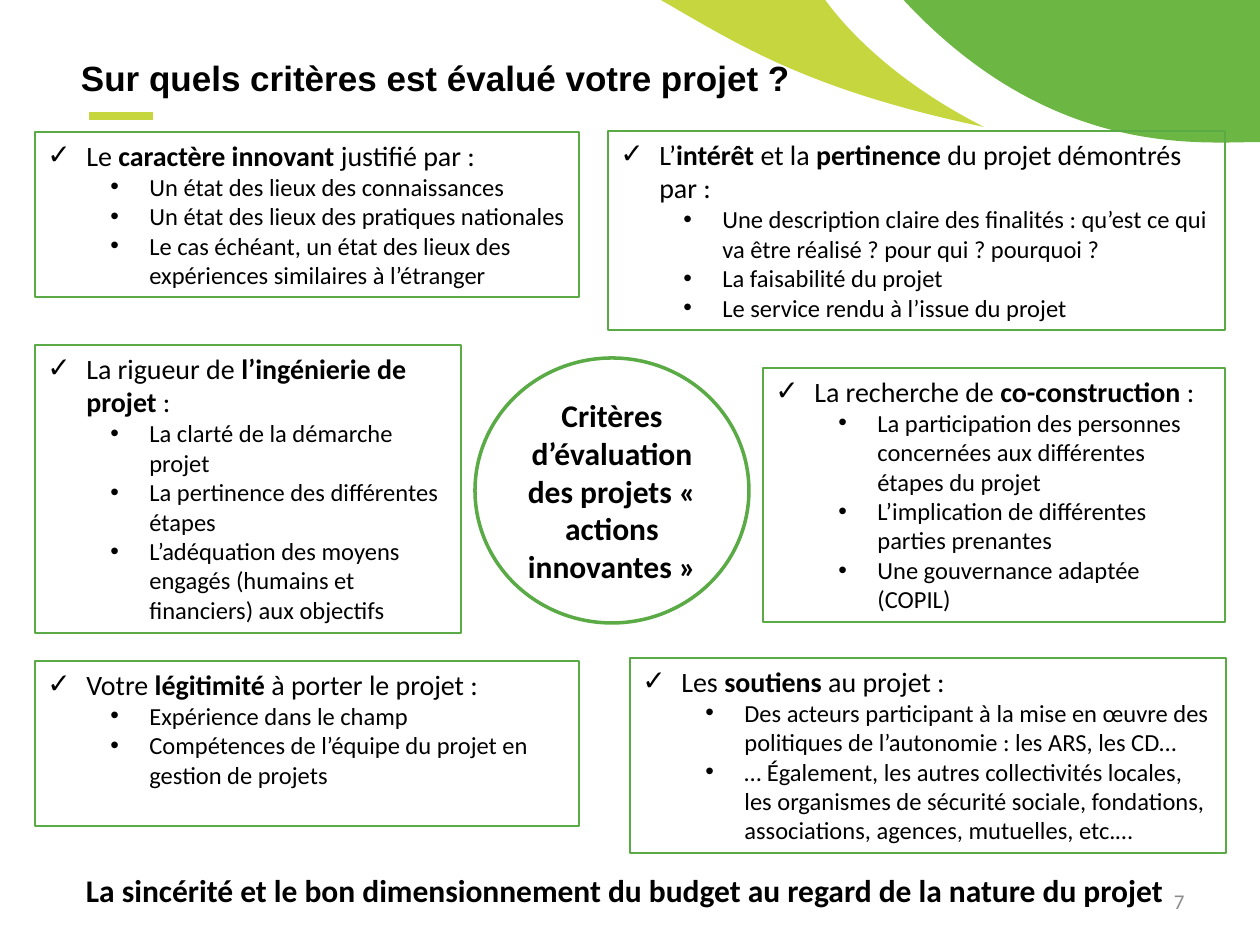
from dataclasses import dataclass

from lxml import etree
from pptx import Presentation
from pptx.dml.color import RGBColor
from pptx.enum.shapes import MSO_CONNECTOR, MSO_SHAPE
from pptx.enum.text import MSO_ANCHOR, PP_ALIGN
from pptx.oxml.ns import qn
from pptx.util import Emu, Pt

PX_PER_INCH = 126
SCALE = 914400 / PX_PER_INCH

GREEN = RGBColor(0x6C, 0xB6, 0x43)
LIME = RGBColor(0xC6, 0xD6, 0x3F)
OUTLINE = RGBColor(0x5A, 0xAB, 0x45)
BLACK = RGBColor(0, 0, 0)
GREY = RGBColor(0x8C, 0x8C, 0x8C)

RECT, ELLIPSE = MSO_SHAPE.RECTANGLE, MSO_SHAPE.OVAL
STRAIGHT = MSO_CONNECTOR.STRAIGHT
TOP, MIDDLE = MSO_ANCHOR.TOP, MSO_ANCHOR.MIDDLE
LEFT, CENTER, RIGHT = PP_ALIGN.LEFT, PP_ALIGN.CENTER, PP_ALIGN.RIGHT

HANGING = 39
ITEM_INDENT = 102

Point = tuple[int, int]
Box = tuple[int, int, int, int]


@dataclass
class Swoosh:
    """Each segment holds one point (a line) or three (a cubic curve)."""
    color: RGBColor
    start: Point
    segments: tuple[tuple[Point, ...], ...]


@dataclass
class Criterion:
    """A framed box; every second run of its heading is bold."""
    box: Box
    heading: tuple[str, ...]
    items: tuple[str, ...]


SWOOSHES = (
    Swoosh(GREEN, (1260, -15), (
        ((1260, 9), (1260, 93), (1260, 142)),
        ((1198, 142), (1043, 160), (891, -14)))),
    Swoosh(LIME, (636, -14), (
        ((816, -14),),
        ((816, -14), (858, 63), (984, 127)),
        ((789, 86), (725, 35), (636, -14)))),
)

CRITERIA = (
    Criterion((35, 132, 544, 165), ("Le ", "caractère innovant ", "justifié par :"), (
        "Un état des lieux des connaissances",
        "Un état des lieux des pratiques nationales",
        "Le cas échéant, un état des lieux des expériences similaires à l’étranger")),
    Criterion((608, 131, 617, 199),
              ("L’", "intérêt", " et la ", "pertinence", " du projet démontrés par :"), (
        "Une description claire des finalités : qu’est ce qui va être réalisé ? "
        "pour qui ? pourquoi ?",
        "La faisabilité du projet",
        "Le service rendu à l’issue du projet")),
    Criterion((35, 345, 426, 288), ("La rigueur de ", "l’ingénierie de projet", " :"), (
        "La clarté de la démarche projet",
        "La pertinence des différentes étapes",
        "L’adéquation des moyens engagés (humains et financiers) aux objectifs")),
    Criterion((763, 368, 462, 254), ("La recherche de ", "co-construction", " :"), (
        "La participation des personnes concernées aux différentes étapes du projet",
        "L’implication de différentes parties prenantes",
        "Une gouvernance adaptée (COPIL)")),
    Criterion((35, 661, 544, 165), ("Votre ", "légitimité", " à porter le projet :"), (
        "Expérience dans le champ",
        "Compétences de l’équipe du projet en gestion de projets")),
    Criterion((630, 658, 596, 195), ("Les ", "soutiens", " au projet :"), (
        "Des acteurs participant à la mise en œuvre des politiques de l’autonomie : "
        "les ARS, les CD…",
        "… Également, les autres collectivités locales, les organismes de sécurité "
        "sociale, fondations, associations, agences, mutuelles, etc.…")),
)


def px(n: int) -> Emu:
    return Emu(round(n * SCALE))


def add_swoosh(s, swoosh: Swoosh) -> None:
    """Join the segment ends by lines, then bend the lines that have control points."""
    builder = s.shapes.build_freeform(*map(px, swoosh.start))
    ends = [tuple(map(px, segment[-1])) for segment in swoosh.segments]
    builder.add_line_segments(ends, close=True)
    sp = builder.convert_to_shape()
    sp.shadow.inherit = False
    sp.fill.solid()
    sp.fill.fore_color.rgb = swoosh.color
    sp.line.fill.background()

    lines = list(sp._element.iter(qn("a:lnTo")))
    for line, segment in zip(lines, swoosh.segments):
        if len(segment) == 3:
            line.tag = qn("a:cubicBezTo")
            line.clear()
            for x, y in segment:
                etree.SubElement(line, qn("a:pt"), x=str(px(x) - sp.left),
                                 y=str(px(y) - sp.top))


def add_accent_line(s, x1: int, x2: int, y: int) -> None:
    line = s.shapes.add_connector(STRAIGHT, px(x1), px(y), px(x2), px(y))
    line.line.color.rgb = LIME
    line.line.width = Pt(4.5)
    etree.SubElement(line._element.spPr, qn("a:effectLst"))


def add_run(p, text: str, size: int, bold: bool = False,
            color: RGBColor = BLACK, font: str = "Calibri") -> None:
    r = p.add_run()
    r.text = text
    r.font.name = font
    r.font.size = Pt(size)
    r.font.bold = bold
    r.font.color.rgb = color


def set_bullet(p, char: str, indent: int) -> None:
    pPr = p._p.get_or_add_pPr()
    pPr.set("marL", str(px(indent)))
    pPr.set("indent", str(-px(HANGING)))
    etree.SubElement(pPr, qn("a:buFont"), typeface="Arial")
    etree.SubElement(pPr, qn("a:buChar"), char=char)


def add_outlined(s, kind: int, box: Box, width: float, anchor):
    sp = s.shapes.add_shape(kind, *map(px, box))
    sp.shadow.inherit = False
    sp.fill.background()
    sp.line.color.rgb = OUTLINE
    sp.line.width = Pt(width)
    tf = sp.text_frame
    tf.word_wrap = True
    tf.vertical_anchor = anchor
    return tf


def add_criterion(s, criterion: Criterion) -> None:
    tf = add_outlined(s, RECT, criterion.box, 0.75, TOP)
    p = tf.paragraphs[0]
    p.alignment = LEFT
    set_bullet(p, "✓", HANGING)
    for i, text in enumerate(criterion.heading):
        add_run(p, text, 16, bold=i % 2 == 1)
    for item in criterion.items:
        p = tf.add_paragraph()
        p.level = 1
        p.alignment = LEFT
        set_bullet(p, "•", ITEM_INDENT)
        add_run(p, item, 14)


def add_label(s, box: Box, align, anchor=TOP):
    tf = s.shapes.add_textbox(*map(px, box)).text_frame
    tf.word_wrap = True
    tf.vertical_anchor = anchor
    tf.paragraphs[0].alignment = align
    return tf


def main() -> None:
    prs = Presentation()
    prs.slide_width, prs.slide_height = px(1260), px(945)
    s = prs.slides.add_slide(prs.slide_layouts[6])

    for swoosh in SWOOSHES:
        add_swoosh(s, swoosh)
    add_accent_line(s, 89, 153, 116)

    title = add_label(s, (81, 50, 872, 67), LEFT)
    title.margin_left = 0
    title.paragraphs[0].space_before = Pt(4)
    add_run(title.paragraphs[0], "Sur quels critères est évalué votre projet ?", 20,
            bold=True, font="Arial")

    hub = add_outlined(s, ELLIPSE, (475, 358, 274, 265), 2, MIDDLE)
    hub.paragraphs[0].alignment = CENTER
    add_run(hub.paragraphs[0],
            "Critères d’évaluation des projets « actions innovantes »", 18, bold=True)

    for criterion in CRITERIA:
        add_criterion(s, criterion)

    budget = add_label(s, (24, 865, 1202, 50), CENTER)
    add_run(budget.paragraphs[0], "La sincérité et le bon dimensionnement du budget "
            "au regard de la nature du projet", 18, bold=True)
    number = add_label(s, (903, 876, 294, 50), RIGHT, MIDDLE)
    add_run(number.paragraphs[0], "7", 12, color=GREY)

    prs.save("out.pptx")


if __name__ == "__main__":
    main()
